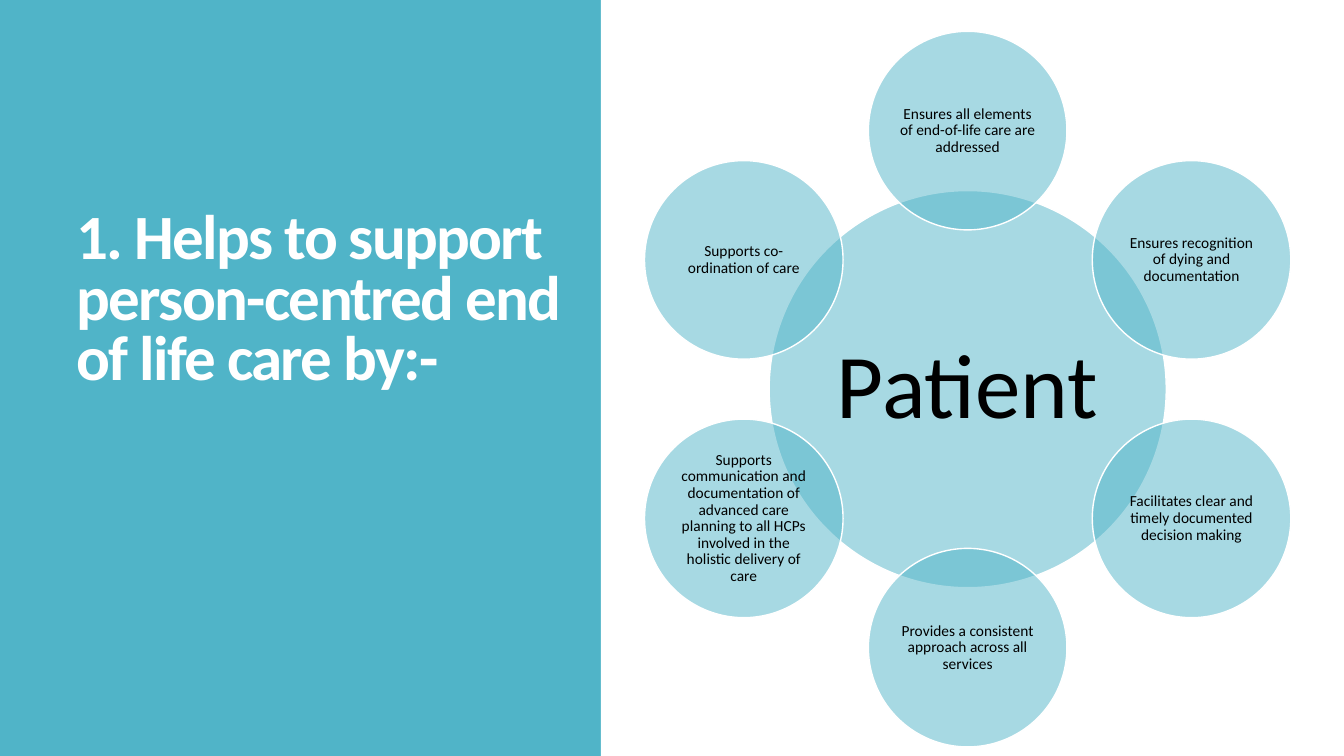
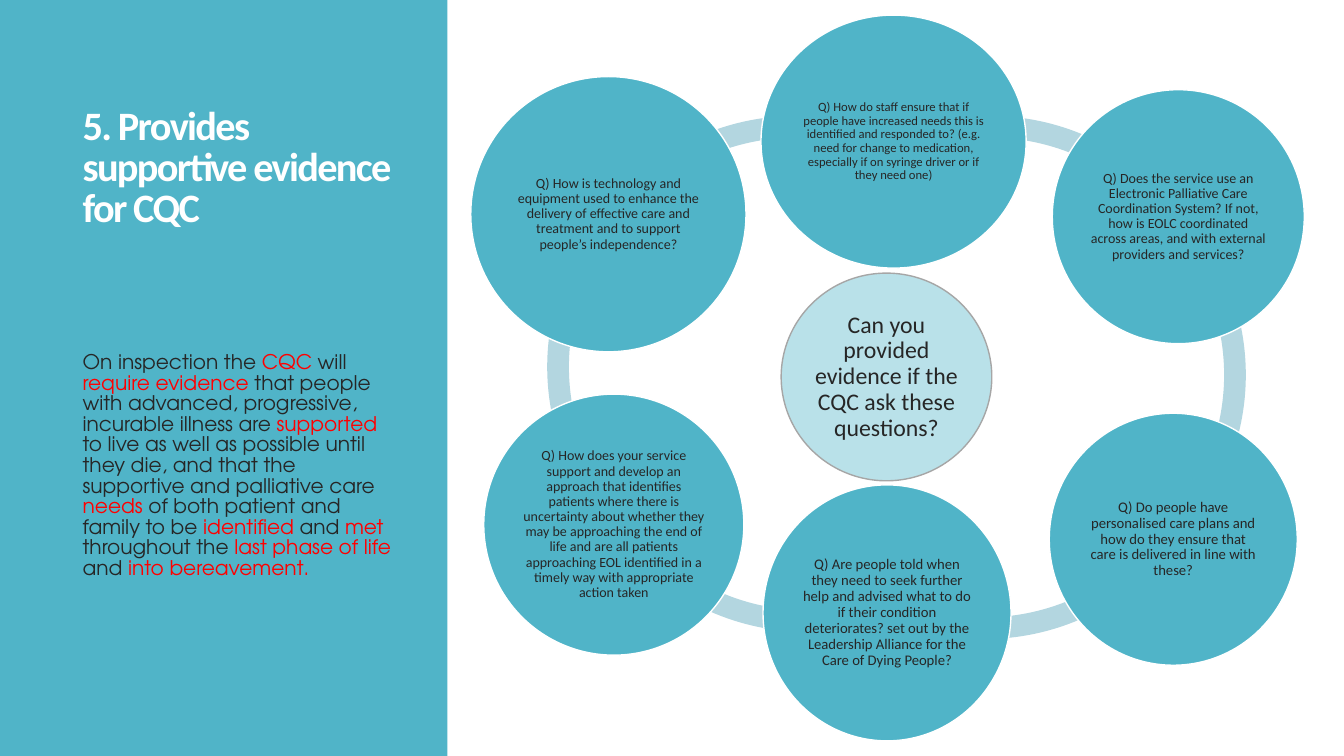
from math import cos, radians, sin

from lxml.etree import SubElement
from pptx import Presentation
from pptx.dml.color import RGBColor
from pptx.enum.shapes import MSO_SHAPE as Shape
from pptx.enum.text import MSO_ANCHOR as Anchor, MSO_AUTO_SIZE as AutoSize, PP_ALIGN as Align
from pptx.oxml.ns import qn
from pptx.util import Inches, Pt

# Colours
TEAL = RGBColor(0x50, 0xB4, 0xC8)
PALE_TEAL = RGBColor(0xB9, 0xE1, 0xE9)
RING_BLUE = RGBColor(0xB3, 0xD6, 0xE0)
WHITE = RGBColor(0xFF, 0xFF, 0xFF)
BLACK = RGBColor(0, 0, 0)
DARK = RGBColor(0x26, 0x26, 0x26)
GREY = RGBColor(0xA6, 0xA6, 0xA6)
RED = RGBColor(0xFF, 0, 0)

# Fonts and grid: 128 columns by 72 rows of square cells
MAIN_FONT = "Calibri"
BODY_FONT = "TeX Gyre Adventor"
COLUMNS, ROWS = 128, 72
CELL = Inches(7.5) / ROWS

# Slide 1: clockwise from the top
SUPPORTS = [
    "Ensures all elements of end-of-life care are addressed",
    "Ensures recognition of dying and documentation",
    "Facilitates clear and timely documented decision making",
    "Provides a consistent approach across all services",
    "Supports communication and documentation of advanced care planning to all HCPs "
    "involved in the holistic delivery of care",
    "Supports co-ordination of care",
]

# Slide 2: alternating plain and highlighted runs
INSPECTION = [
    ("On inspection the ", DARK), ("CQC", RED), (" will ", DARK),
    ("require evidence ", RED),
    ("that people with advanced, progressive, incurable illness are ", DARK),
    ("supported", RED),
    (" to live as well as possible until they die, and that the "
     "supportive and palliative care ", DARK),
    ("needs ", RED), ("of both patient and family to be ", DARK),
    ("identified", RED), (" and ", DARK), ("met", RED),
    (" throughout the ", DARK), ("last phase of life ", RED),
    ("and ", DARK), ("into bereavement.", RED),
]

# Centre column, centre row, start and end angle in degrees
RING_ARCS = [
    (75.84, 33.98, 217.2, 294.3),
    (75.07, 34.94, 137.8, 220.4),
    (76.9, 37.25, 70.3, 145.4),
    (93.79, 37.92, 36.8, 114.5),
    (95.71, 35.71, 317.7, 44.2),
    (94.27, 33.98, 245.9, 323.5),
]

# Centre column, centre row, width, height, text size, question
QUESTIONS = [
    (85.1, 13.49, 25.25, 24.1, 9,
     "Q) How do staff ensure that if people have increased needs this is identified and "
     "responded to? (e.g. need for change to medication, especially if on syringe driver "
     "or if they need one)"),
    (112.22, 20.64, 24, 24.19, 10,
     "Q) Does the service use an Electronic Palliative Care Coordination System? If not, "
     "how is EOLC coordinated across areas, and with external providers and services?"),
    (111.74, 51.36, 23.62, 24, 10.5,
     "Q) Do people have personalised care plans and how do they ensure that care is "
     "delivered in line with these?"),
    (84.48, 58.37, 23.62, 24.38, 10.5,
     "Q) Are people told when they need to seek further help and advised what to do if "
     "their condition deteriorates? set out by the Leadership Alliance for the Care of "
     "Dying People?"),
    (58.46, 49.97, 24.77, 24.86, 10,
     "Q) How does your service support and develop an approach that identifies patients "
     "where there is uncertainty about whether they may be approaching the end of life and "
     "are all patients approaching EOL identified in a timely way with appropriate action "
     "taken"),
    (57.94, 20.4, 26.21, 26.21, 10,
     "Q) How is technology and equipment used to enhance the delivery of effective care "
     "and treatment and to support people’s independence?"),
]


def cells(count):
    return round(count * CELL)


class Deck:
    """Holds the shared style and the slide being built."""

    def __init__(self):
        self.presentation = Presentation()
        self.presentation.slide_width = cells(COLUMNS)
        self.presentation.slide_height = cells(ROWS)
        self.slide = None

    def new_slide(self, background):
        layout = self.presentation.slide_layouts[5]
        self.slide = self.presentation.slides.add_slide(layout)
        fill = self.slide.background.fill
        fill.solid()
        fill.fore_color.rgb = background

    def add_run(self, paragraph, text, size, color, font=MAIN_FONT, bold=False):
        run = paragraph.add_run()
        run.text = text
        run.font.name = font
        run.font.size = Pt(size)
        run.font.bold = bold
        run.font.color.rgb = color
        return run

    def title(self, text, size, box, spacing, anchor, bottom=0.05):
        title = self.slide.shapes.title
        title.left, title.top, title.width, title.height = map(cells, box)
        frame = title.text_frame
        frame.word_wrap = True
        frame.auto_size = AutoSize.NONE
        frame.vertical_anchor = anchor
        frame.margin_bottom = Inches(bottom)
        paragraph = frame.paragraphs[0]
        paragraph.alignment = Align.LEFT
        paragraph.line_spacing = spacing
        run = self.add_run(paragraph, text, size, WHITE, bold=True)
        run.font._element.set("spc", "-120")
        return frame

    def body(self, frame, runs, size, spacing, gap):
        paragraph = frame.add_paragraph()
        paragraph.alignment = Align.LEFT
        paragraph.line_spacing = spacing
        paragraph.space_before = Pt(gap)
        for text, color in runs:
            self.add_run(paragraph, text, size, color, BODY_FONT)

    def shape(self, kind, box, fill, line=None, opacity=100):
        shape = self.slide.shapes.add_shape(kind, *map(cells, box))
        shape.shadow.inherit = False
        shape.fill.solid()
        shape.fill.fore_color.rgb = fill
        if opacity < 100:
            color = shape.element.spPr.find(qn("a:solidFill")).find(qn("a:srgbClr"))
            SubElement(color, qn("a:alpha")).set("val", str(opacity * 1000))
        if line is None:
            shape.line.fill.background()
        else:
            shape.line.color.rgb = line
            shape.line.width = Pt(1)
        return shape

    def panel(self, left, width, fill):
        panel = self.shape(Shape.RECTANGLE, (left, 0, width, ROWS), fill)
        self.slide.shapes.title.element.addprevious(panel.element)

    def centred(self, kind, x, y, width, height, fill, line=None, opacity=100):
        box = (x - width / 2, y - height / 2, width, height)
        return self.shape(kind, box, fill, line, opacity)

    def circle(self, x, y, width, height, text, size, color,
               fill=TEAL, line=WHITE, opacity=100, inset=0.02):
        circle = self.centred(Shape.OVAL, x, y, width, height, fill, line, opacity)
        frame = circle.text_frame
        frame.word_wrap = True
        frame.vertical_anchor = Anchor.MIDDLE
        frame.margin_left = frame.margin_right = Inches(inset)
        frame.margin_top = frame.margin_bottom = Inches(inset)
        paragraph = frame.paragraphs[0]
        paragraph.alignment = Align.CENTER
        paragraph.line_spacing = 0.9
        self.add_run(paragraph, text, size, color)

    def arc(self, x, y, diameter, start, end):
        arc = self.centred(Shape.BLOCK_ARC, x, y, diameter, diameter, RING_BLUE)
        # Angles are stored in 60000ths of a degree, adjustments in 100000ths
        arc.adjustments[0] = start * 0.6
        arc.adjustments[1] = end * 0.6
        arc.adjustments[2] = 0.045


def build_support_slide(deck):
    deck.new_slide(TEAL)
    deck.panel(57.22, COLUMNS - 57.22, WHITE)
    deck.title("1. Helps to support person-centred end of life care by:-", 45,
               (6.34, 8.06, 48.77, 35.71), 0.8, Anchor.BOTTOM, bottom=0.66)

    # Patient at the centre, supports evenly spaced around it
    x, y, orbit, diameter = 92.16, 37.06, 24.62, 18.91
    deck.circle(x, y, 2 * diameter, 2 * diameter, "Patient", 65, BLACK,
                opacity=50, inset=0.09)
    for index, text in enumerate(SUPPORTS):
        angle = radians(index * 360 / len(SUPPORTS))
        deck.circle(x + orbit * sin(angle), y - orbit * cos(angle),
                    diameter, diameter, text, 11, BLACK, opacity=50)


def build_evidence_slide(deck):
    deck.new_slide(WHITE)
    deck.panel(0, 42.62, TEAL)
    frame = deck.title("5. Provides supportive evidence for CQC", 28.8,
                       (6.91, 9.79, 31.39, 52.32), 0.85, Anchor.TOP)
    deck.body(frame, INSPECTION, 14.4, 0.85, gap=87)

    # Ring behind the questions
    for x, y, start, end in RING_ARCS:
        deck.arc(x, y, 45.89, start, end)

    # Central question and those around it
    deck.circle(84.43, 35.9, 20.06, 19.78,
                "Can you provided evidence if the CQC ask these questions?",
                17, DARK, fill=PALE_TEAL, line=GREY)
    for x, y, width, height, size, text in QUESTIONS:
        deck.circle(x, y, width, height, text, size, DARK, inset=0.01)


def main():
    deck = Deck()
    build_support_slide(deck)
    build_evidence_slide(deck)
    deck.presentation.save("out.pptx")


if __name__ == "__main__":
    main()
